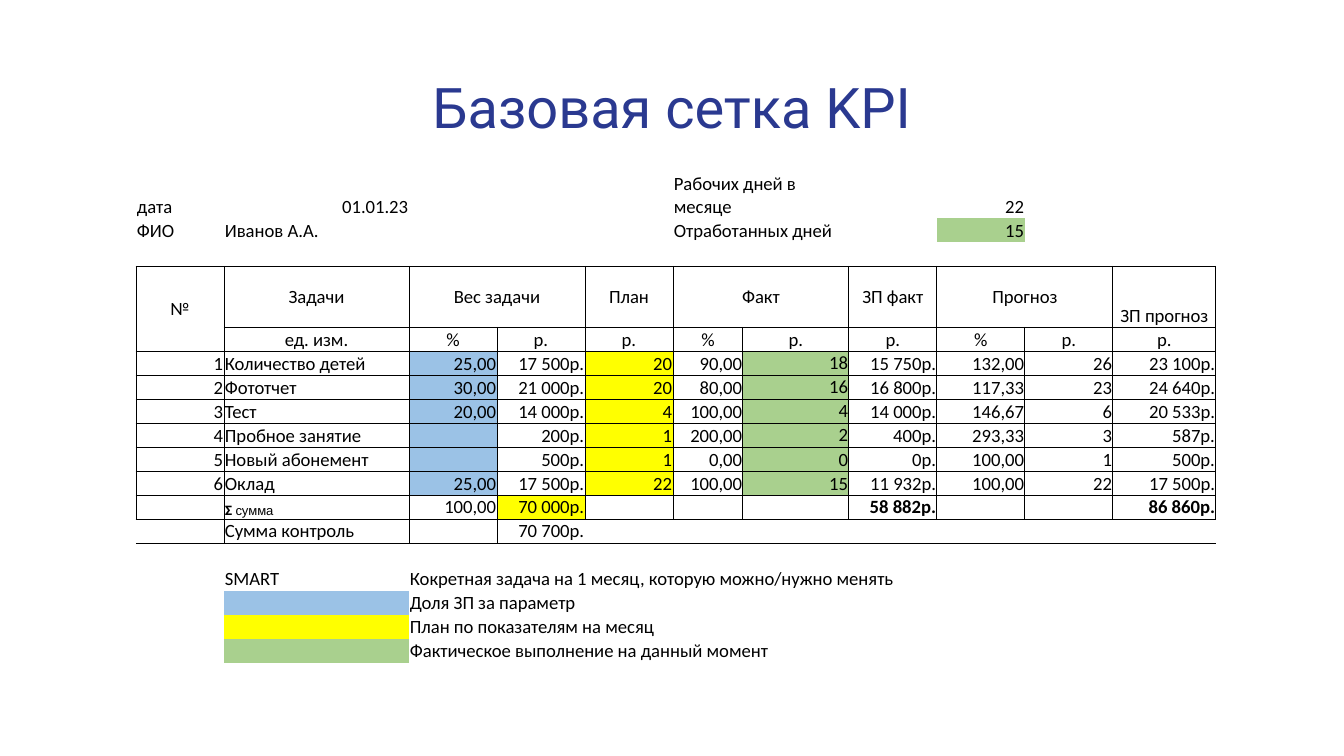
from dataclasses import dataclass

import pptx
import pptx.dml.color
import pptx.enum.text
import pptx.oxml
import pptx.oxml.ns
import pptx.util

PX = 914400 / 134.4
BLACK, WHITE, NAVY = "000000", "FFFFFF", "2A3990"
BLUE, YELLOW, GREEN = "9BC2E6", "FFFF00", "A9D08E"
NO_STYLE = "{2D5ABB26-0587-4C30-8999-92F81FD0307C}"
ALIGN = {"l": pptx.enum.text.PP_ALIGN.LEFT,
         "c": pptx.enum.text.PP_ALIGN.CENTER,
         "r": pptx.enum.text.PP_ALIGN.RIGHT}
ANCHOR = {"t": pptx.enum.text.MSO_ANCHOR.TOP,
          "m": pptx.enum.text.MSO_ANCHOR.MIDDLE,
          "b": pptx.enum.text.MSO_ANCHOR.BOTTOM}

COL_WIDTHS = [88, 185, 88, 88, 88, 70, 106, 88, 88, 88, 103]
ROW_HEIGHTS = [46, 24, 24, 61] + [24] * 14
HEAD, UNITS, FIRST_TASK, TOTAL, CHECK, LEGEND = 3, 4, 5, 11, 12, 14


@dataclass
class Run:
    text: str
    size: int = 10
    font: str = "Calibri"
    color: str = BLACK
    bold: bool = False


@dataclass
class Cell:
    runs: tuple[Run, ...] = ()
    align: str = "l"
    anchor: str = "b"
    fill: str = ""
    rows: int = 1
    cols: int = 1


def px(n: int) -> pptx.util.Emu:
    return pptx.util.Emu(round(n * PX))


def rgb(color: str) -> pptx.dml.color.RGBColor:
    return pptx.dml.color.RGBColor.from_string(color)


def label(text: str, align: str = "l", anchor: str = "b", fill: str = "",
          rows: int = 1, cols: int = 1, bold: bool = False) -> Cell:
    runs = (Run(text, bold=bold),) if text else ()
    return Cell(runs, align, anchor, fill, rows, cols)


def add_runs(p, runs: tuple[Run, ...], align: str) -> None:
    p.alignment = ALIGN[align]
    for run in runs:
        r = p.add_run()
        r.text = run.text
        r.font.size = pptx.util.Pt(run.size)
        r.font.name = run.font
        r.font.bold = run.bold
        r.font.color.rgb = rgb(run.color)


def sides(row: int, col: int) -> str:
    """Edges of a cell that carry a line."""
    if HEAD <= row <= TOTAL:
        return "LRTB"
    if row == HEAD - 1:
        return "B"
    if row == CHECK:
        return {0: "RT", 1: "LRT", 2: "LT"}.get(col, "T")
    return ""


def add_borders(tc, edges: str) -> None:
    for edge in edges:
        tc.get_or_add_tcPr().append(pptx.oxml.parse_xml(
            f'<a:ln{edge} {pptx.oxml.ns.nsdecls("a")} w="6350"><a:solidFill>'
            f'<a:srgbClr val="{BLACK}"/></a:solidFill></a:ln{edge}>'))


def draw_cell(tbl, row: int, col: int, spec: Cell) -> None:
    c = tbl.cell(row, col)
    c.margin_left = c.margin_right = c.margin_top = px(1)
    c.margin_bottom = 0
    c.vertical_anchor = ANCHOR[spec.anchor]
    add_borders(c._tc, sides(row, col))
    if spec.fill:
        c.fill.solid()
        c.fill.fore_color.rgb = rgb(spec.fill)
    else:
        c.fill.background()
    p = c.text_frame.paragraphs[0]
    add_runs(p, spec.runs, spec.align)
    if not spec.runs:  # keeps empty rows low
        p._p.append(pptx.oxml.parse_xml(
            f'<a:endParaRPr {pptx.oxml.ns.nsdecls("a")} sz="1000">'
            '<a:latin typeface="Calibri"/></a:endParaRPr>'))
    if spec.rows * spec.cols > 1:
        c.merge(tbl.cell(row + spec.rows - 1, col + spec.cols - 1))


# Month and employee
cells: dict[tuple[int, int], Cell] = {
    (0, 0): label("дата"),
    (0, 1): label("01.01.23", "r"),
    (0, 5): label("Рабочих дней в месяце", cols=2),
    (0, 8): label("22", "r"),
    (1, 0): label("ФИО"),
    (1, 1): label("Иванов А.А.", cols=2),
    (1, 5): label("Отработанных дней", cols=2),
    (1, 8): label("15", "r", fill=GREEN),
}

# Column heads and units
cells[HEAD, 0] = label("№", "c", "m", rows=2)
for col, text, span in [(1, "Задачи", 1), (2, "Вес задачи", 2), (4, "План", 1),
                        (5, "Факт", 2), (7, "ЗП факт", 1), (8, "Прогноз", 2),
                        (10, "ЗП прогноз", 1)]:
    cells[HEAD, col] = label(text, "c", "b" if col == 10 else "m", cols=span)
for col, text in enumerate("ед. изм.|%|р.|р.|%|р.|р.|%|р.|р.".split("|"), 1):
    cells[UNITS, col] = label(text, "c", "b" if col in (1, 10) else "m")

# Tasks
TASKS = [
    "Количество детей|25,00|17 500р.|20|90,00|18|15 750р.|132,00|26|23 100р.",
    "Фототчет|30,00|21 000р.|20|80,00|16|16 800р.|117,33|23|24 640р.",
    "Тест|20,00|14 000р.|4|100,00|4|14 000р.|146,67|6|20 533р.",
    "Пробное занятие||200р.|1|200,00|2|400р.|293,33|3|587р.",
    "Новый абонемент||500р.|1|0,00|0|0р.|100,00|1|500р.",
    "Оклад|25,00|17 500р.|22|100,00|15|11 932р.|100,00|22|17 500р.",
]
TASK_FILLS = {2: BLUE, 4: YELLOW, 6: GREEN}
for i, task in enumerate(TASKS):
    for col, text in enumerate([str(i + 1)] + task.split("|")):
        cells[FIRST_TASK + i, col] = label(
            text, "l" if col == 1 else "r", "t" if col == 6 and i < 4 else "b",
            TASK_FILLS.get(col, ""))

# Totals and check sum
cells |= {
    (TOTAL, 1): Cell((Run("Ʃ ", 7, "Roboto", bold=True), Run("сумма", 7, "Arial"))),
    (TOTAL, 2): label("100,00", "r"),
    (TOTAL, 3): label("70 000р.", "r", fill=YELLOW),
    (TOTAL, 7): label("58 882р.", "r", bold=True),
    (TOTAL, 10): label("86 860р.", "r", fill=WHITE, bold=True),
    (CHECK, 1): label("Сумма контроль"),
    (CHECK, 3): label("70 700р.", "r"),
}

# Legend
for i, (key, fill, text, span) in enumerate([
        ("SMART", "", "Кокретная задача на 1 месяц, которую можно/нужно менять", 6),
        ("", BLUE, "Доля ЗП за параметр", 3),
        ("", YELLOW, "План по показателям на месяц", 4),
        ("", GREEN, "Фактическое выполнение на данный момент", 5)]):
    cells[LEGEND + i, 1] = label(key, fill=fill)
    cells[LEGEND + i, 2] = label(text, cols=span)

prs = pptx.Presentation()
prs.slide_width, prs.slide_height = px(1344), px(756)
s = prs.slides.add_slide(prs.slide_layouts[6])

# Table
tbl = s.shapes.add_table(len(ROW_HEIGHTS), len(COL_WIDTHS), px(136), px(172),
                         px(sum(COL_WIDTHS)), px(sum(ROW_HEIGHTS))).table
tbl.first_row = tbl.horz_banding = False
tbl._tbl.tblPr.find(pptx.oxml.ns.qn("a:tableStyleId")).text = NO_STYLE
for column, width in zip(tbl.columns, COL_WIDTHS):
    column.width = px(width)
for line, height in zip(tbl.rows, ROW_HEIGHTS):
    line.height = px(height)
for row in range(len(ROW_HEIGHTS)):
    for col in range(len(COL_WIDTHS)):
        draw_cell(tbl, row, col, cells.get((row, col), Cell()))

# Title
sp = s.shapes.add_textbox(px(46), px(60), px(1252), px(89))
tf = sp.text_frame
tf.word_wrap = True
tf.margin_left = tf.margin_right = tf.margin_top = tf.margin_bottom = px(13)
add_runs(tf.paragraphs[0], (Run("Базовая сетка KPI", 30, "Roboto", NAVY),), "c")

prs.save("out.pptx")
